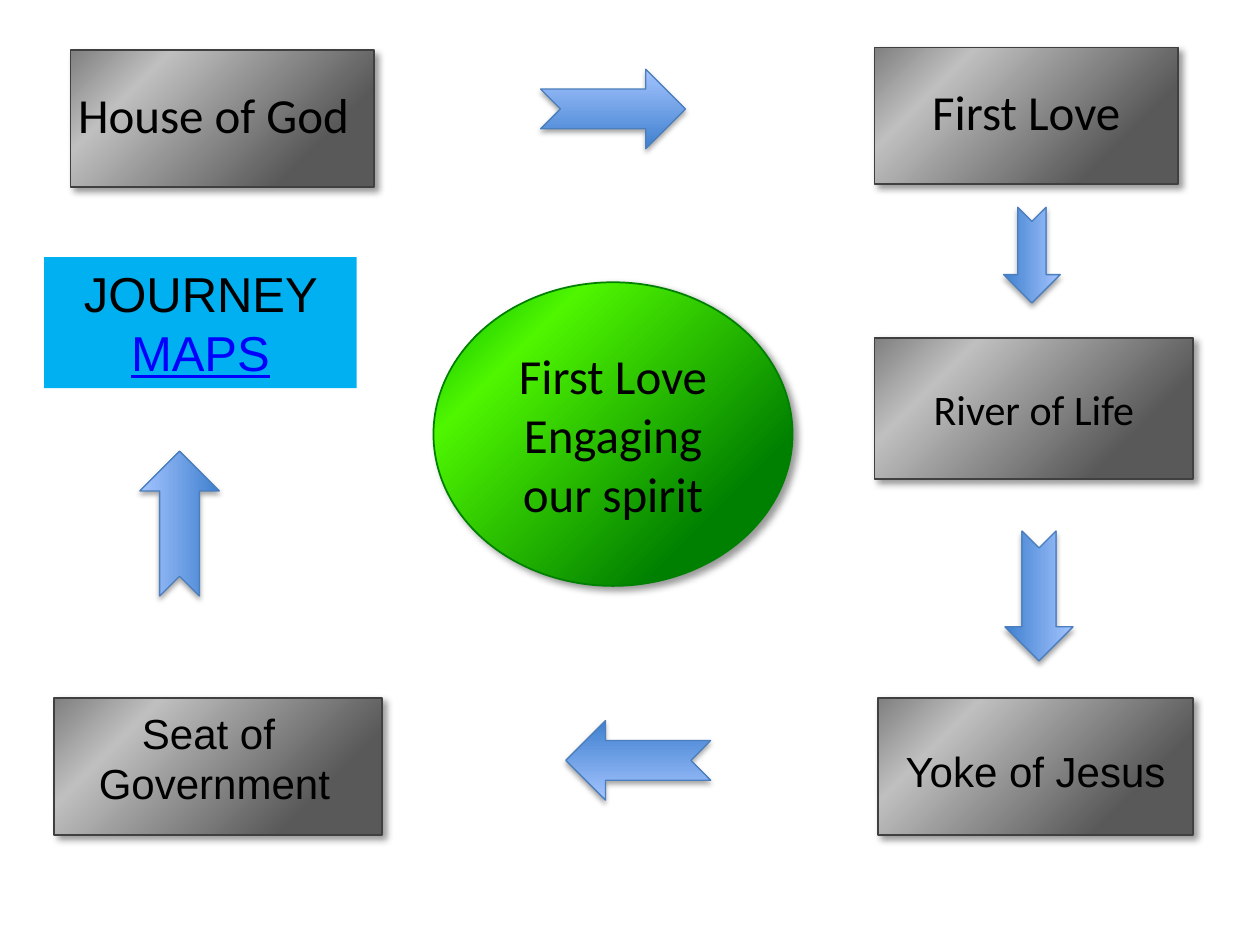
from lxml.etree import SubElement
from pptx import Presentation
from pptx.dml.color import RGBColor
from pptx.enum.shapes import MSO_SHAPE
from pptx.enum.text import MSO_ANCHOR, PP_ALIGN
from pptx.oxml.ns import qn
from pptx.util import Pt


def style_shape(shape, look):
    """Apply the gradient, outline and soft shadow of one look."""
    shape.fill.gradient()
    shape.fill.gradient_angle = look["angle"]
    properties = shape._element.spPr
    stops = properties.find(".//" + qn("a:gsLst"))
    stops.clear()
    for position, color in look["stops"]:
        stop = SubElement(stops, qn("a:gs"), pos=str(position * 1000))
        SubElement(stop, qn("a:srgbClr"), val=color)
    shape.line.color.rgb = RGBColor.from_string(look["line"])
    shape.line.width = Pt(look["width"])
    shape.shadow.inherit = False
    blur, distance, direction, opacity = look["shadow"]
    shadow = SubElement(
        properties.find(qn("a:effectLst")), qn("a:outerShdw"),
        blurRad=str(Pt(blur)), dist=str(Pt(distance)),
        dir=str(direction * 60000), rotWithShape="0")
    black = SubElement(shadow, qn("a:srgbClr"), val="000000")
    SubElement(black, qn("a:alpha"), val=str(opacity * 1000))


def write_text(box, paragraphs, font, size, margins=True):
    """Fill a box with centred black paragraphs."""
    frame = box.text_frame
    frame.word_wrap = True
    if not margins:
        for side in ("left", "top", "right", "bottom"):
            setattr(frame, "margin_" + side, 0)
    for index, text in enumerate(paragraphs):
        para = frame.add_paragraph() if index else frame.paragraphs[0]
        para.text = text
        para.alignment = PP_ALIGN.CENTER
        for span in para.runs:
            for name, value in {"name": font, "size": Pt(size)}.items():
                setattr(span.font, name, value)
            span.font.color.rgb = RGBColor.from_string("000000")


soft = (4, 3, 45, 40)
gray = {"stops": [(22, "595959"), (77, "BFBFBF"), (100, "808080")],
        "angle": 135, "line": "404040", "width": 1, "shadow": soft}
green = {"stops": [(22, "008000"), (77, "4FF600"), (100, "00B300")],
         "angle": 135, "line": "008000", "width": 1, "shadow": soft}
blue = {"stops": [(0, "3F80CE"), (100, "A4C4FF")],
        "angle": 90, "line": "4B7EBC", "width": 0.75,
        "shadow": (3.1, 1.8, 90, 35)}

deck = Presentation()
deck.slide_width, deck.slide_height = Pt(720), Pt(540)
page = deck.slides.add_slide(deck.slide_layouts[6])

# Corner stations: a gray plate grouped with its label
stations = [
    ("First Love", "Calibri", 28, (499.7, 27.1, 173.5, 78), (505.4, 46.8, 162, 35.3)),
    ("Seat of \vGovernment", "Arial", 24, (31, 399, 187.2, 78), (31, 404, 183, 58.3)),
    ("Yoke of Jesus", "Arial", 24, (501.8, 399, 180, 78), (501.8, 426.2, 180, 28.8)),
    ("House of God", "Calibri", 28, (40.3, 28.8, 173.5, 78), (41, 48.2, 162, 35.3)),
]
for text, font, size, plate_place, label_place in stations:
    group = page.shapes.add_group_shape()
    plate = group.shapes.add_shape(MSO_SHAPE.RECTANGLE, *map(Pt, plate_place))
    style_shape(plate, gray)
    label = group.shapes.add_textbox(*map(Pt, label_place))
    write_text(label, [text], font, size, margins=False)

# River station
river = page.shapes.add_shape(
    MSO_SHAPE.RECTANGLE, Pt(499.7), Pt(193), Pt(182.2), Pt(80.6))
style_shape(river, gray)
river.text_frame.vertical_anchor = MSO_ANCHOR.MIDDLE
write_text(river, ["River of Life"], "Calibri", 24)

# Central ellipse
center = page.shapes.add_shape(
    MSO_SHAPE.OVAL, Pt(247.7), Pt(161.3), Pt(205.2), Pt(173.5))
style_shape(center, green)
center.text_frame.vertical_anchor = MSO_ANCHOR.MIDDLE
write_text(center, ["First Love", "Engaging our spirit"], "Calibri", 28, margins=False)

# Title panel, with its second word marked
title = page.shapes.add_textbox(Pt(25.2), Pt(146.9), Pt(178.6), Pt(75))
title.fill.solid()
title.fill.fore_color.rgb = RGBColor.from_string("00B0F0")
write_text(title, ["JOURNEY "], "Arial", 28)
span = title.text_frame.paragraphs[0].add_run()
span.text = "MAPS"
for name, value in {"name": "Arial", "size": Pt(28), "underline": True}.items():
    setattr(span.font, name, value)
span.font.color.rgb = RGBColor.from_string("0000FF")

# Arrows around the cycle: place before turning, then rotation
arrows = [
    ((308.9, 39.6, 82.8, 45.4), 0),
    ((562.3, 129.6, 54.7, 32.4), 90),
    ((556.6, 321.1, 74.2, 38.9), 90),
    ((323.3, 411.8, 82.8, 45.4), 180),
    ((61.2, 276.5, 82.8, 45.4), 270),
]
for place, rotation in arrows:
    arrow = page.shapes.add_shape(MSO_SHAPE.NOTCHED_RIGHT_ARROW, *map(Pt, place))
    arrow.rotation = rotation
    style_shape(arrow, blue)

deck.save("out.pptx")
